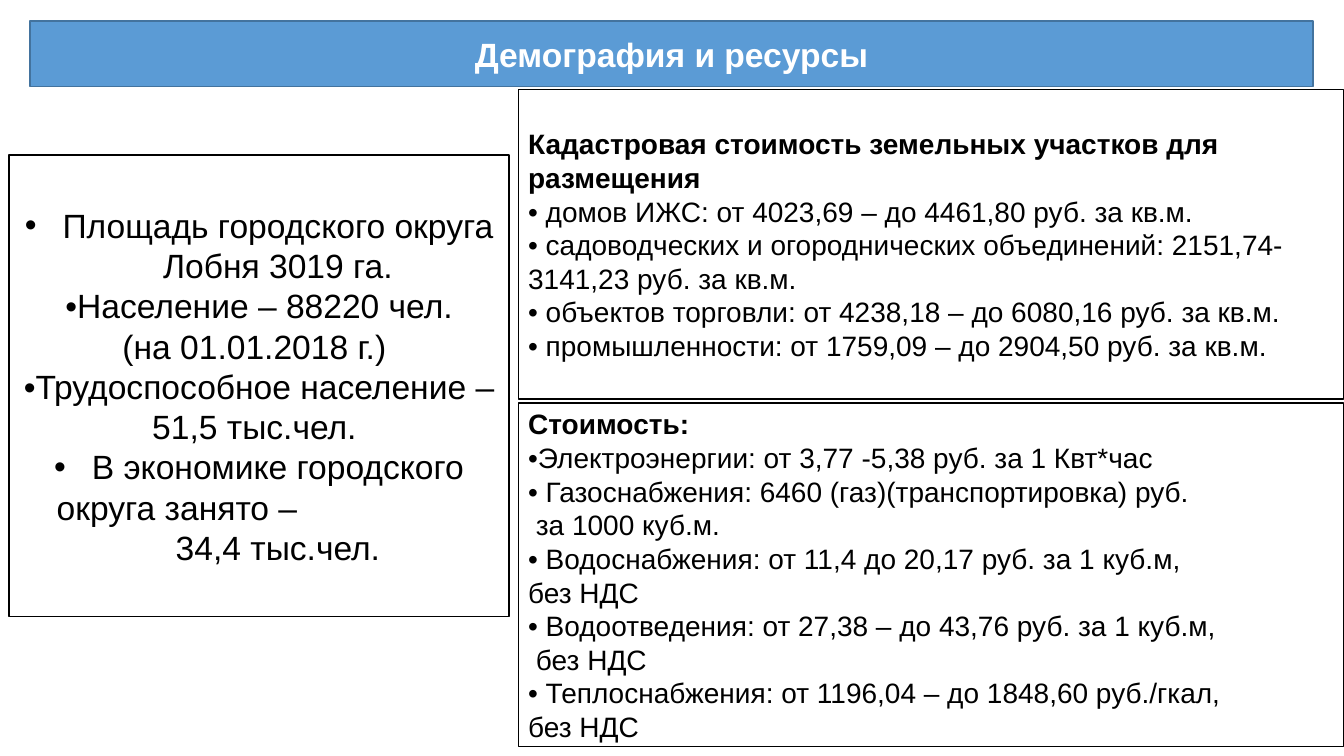
from lxml.etree import SubElement
from pptx import Presentation
from pptx.dml.color import RGBColor
from pptx.enum.shapes import MSO_SHAPE
from pptx.enum.text import MSO_ANCHOR, PP_ALIGN
from pptx.oxml.ns import qn
from pptx.util import Cm, Pt

TITLE_FILL, TITLE_LINE = "5B9BD5", "43739E"
BLACK, WHITE = "000000", "FFFFFF"
HANGING = 0.95
RIGHT_LEFT, RIGHT_WIDTH = 13.06, 20.8

# Each entry: text, alignment, left margin in cm, has a bullet
POPULATION = [
    ("Площадь городского округа Лобня 3019 га.", PP_ALIGN.CENTER, HANGING, True),
    ("•Население – 88220 чел.\v(на 01.01.2018 г.) ", PP_ALIGN.CENTER, 0, False),
    ("•Трудоспособное население – 51,5 тыс.чел. ", PP_ALIGN.CENTER, 0, False),
    ("В экономике городского", PP_ALIGN.CENTER, HANGING, True),
    ("округа занято –", PP_ALIGN.LEFT, HANGING, False),
    ("34,4 тыс.чел.", PP_ALIGN.CENTER, HANGING, False),
]
LAND_PRICES = [
    "Кадастровая стоимость земельных участков для размещения",
    "• домов ИЖС: от 4023,69 – до 4461,80 руб. за кв.м.",
    "• садоводческих и огороднических объединений: 2151,74-3141,23 руб. за кв.м.",
    "• объектов торговли: от 4238,18 – до 6080,16 руб. за кв.м.",
    "• промышленности: от 1759,09 – до 2904,50 руб. за кв.м.",
]
UTILITY_PRICES = [
    "Стоимость:",
    "•Электроэнергии: от 3,77 -5,38 руб. за 1 Квт*час",
    "• Газоснабжения: 6460 (газ)(транспортировка) руб.",
    " за 1000 куб.м.",
    "• Водоснабжения: от 11,4 до 20,17 руб. за 1 куб.м,",
    "без НДС",
    "• Водоотведения: от 27,38 – до 43,76 руб. за 1 куб.м,",
    " без НДС",
    "• Теплоснабжения: от 1196,04 – до 1848,60 руб./гкал,",
    "без НДС",
]


def color(hex_code):
    return RGBColor.from_string(hex_code)


class SlideWriter:
    font_name = "Arial"

    def __init__(self, slide):
        self.slide = slide

    def box(self, left, top, width, height, line=BLACK, fill=None):
        """Draw an outlined rectangle, in cm, and return its text frame."""
        rectangle = self.slide.shapes.add_shape(
            MSO_SHAPE.RECTANGLE, Cm(left), Cm(top), Cm(width), Cm(height))
        rectangle.shadow.inherit = False
        if fill:
            rectangle.fill.solid()
            rectangle.fill.fore_color.rgb = color(fill)
        else:
            rectangle.fill.background()
        rectangle.line.color.rgb = color(line)
        rectangle.line.width = Pt(1)
        frame = rectangle.text_frame
        layout = {"word_wrap": True, "vertical_anchor": MSO_ANCHOR.MIDDLE}
        for name, value in layout.items():
            setattr(frame, name, value)
        return frame

    def paragraph(self, frame, text, size, bold=False, ink=BLACK,
                  align=PP_ALIGN.LEFT, margin=0, bullet=False):
        first = frame.paragraphs[0]
        paragraph = frame.add_paragraph() if first.runs else first
        paragraph.text = text
        paragraph.alignment = align
        for run in paragraph.runs:
            style = {"name": self.font_name, "size": Pt(size), "bold": bold}
            for name, value in style.items():
                setattr(run.font, name, value)
            run.font.color.rgb = color(ink)
        properties = paragraph._p.get_or_add_pPr()
        properties.set("marL", str(Cm(margin)))
        properties.set("indent", str(-Cm(margin) if bullet else 0))
        if bullet:
            SubElement(properties, qn("a:buFont"), typeface=self.font_name)
            SubElement(properties, qn("a:buChar"), char="•")

    def price_list(self, top, height, lines):
        """Write a right-hand box whose first line is a bold heading."""
        frame = self.box(RIGHT_LEFT, top, RIGHT_WIDTH, height)
        for index, text in enumerate(lines):
            self.paragraph(frame, text, 20, bold=index == 0)


def main():
    presentation = Presentation()
    presentation.slide_width, presentation.slide_height = Cm(33.87), Cm(19.05)
    writer = SlideWriter(presentation.slides.add_slide(presentation.slide_layouts[6]))

    population = writer.box(0.23, 3.91, 12.6, 11.63)
    for text, align, margin, bullet in POPULATION:
        writer.paragraph(population, text, 24, align=align, margin=margin, bullet=bullet)

    writer.price_list(2.26, 7.8, LAND_PRICES)
    title = writer.box(0.76, 0.53, 32.33, 1.65, TITLE_LINE, TITLE_FILL)
    writer.paragraph(title, "Демография и ресурсы", 24, True, WHITE, PP_ALIGN.CENTER)
    writer.price_list(10.16, 8.66, UTILITY_PRICES)

    presentation.save("out.pptx")


if __name__ == "__main__":
    main()
